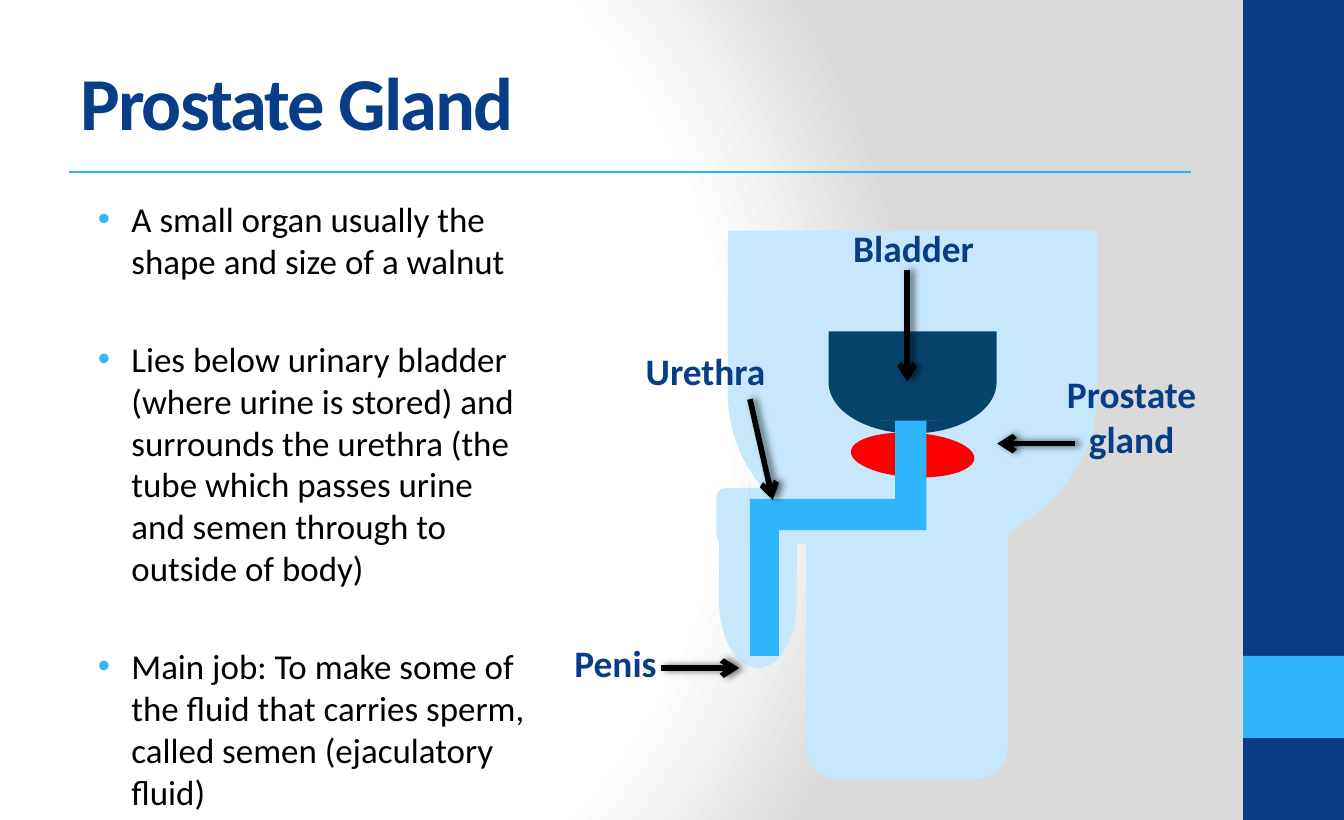
from lxml import etree
from pptx import Presentation
from pptx.dml import color
from pptx.enum import shapes, text
from pptx.oxml import ns
from pptx.util import Inches, Pt

NAVY, SKY, PALE, DEEP = "073E87", "31B6FD", "C6E7FC", "06436B"
RED, BLACK, WHITE, GREY = "FF0000", "000000", "FFFFFF", "DADADA"
KIND = shapes.MSO_SHAPE


def rgb(value):
    return color.RGBColor.from_string(value)


def add_xml(parent, tag, **attributes):
    element = etree.SubElement(parent, ns.qn(tag))
    for name, value in attributes.items():
        element.set(name, str(value))
    return element


def paint_background(slide):
    fill = slide.background.fill
    fill.gradient()
    gradient = fill._fill._gradFill
    for child in list(gradient):
        gradient.remove(child)
    stops = add_xml(gradient, "a:gsLst")
    for position, value in ((0, WHITE), (75, WHITE), (100, GREY)):
        stop = add_xml(stops, "a:gs", pos=position * 1000)
        add_xml(stop, "a:srgbClr", val=value)
    circle = add_xml(gradient, "a:path", path="circle")
    add_xml(circle, "a:fillToRect", l=20000, t=50000, r=100000, b=50000)


def add_block(slide, kind, box, fill, rotation=0, adjustments=()):
    shape = slide.shapes.add_shape(kind, *map(Inches, box))
    shape.shadow.inherit = False
    shape.fill.solid()
    shape.fill.fore_color.rgb = rgb(fill)
    shape.line.fill.background()
    shape.rotation = rotation
    for index, value in enumerate(adjustments):
        shape.adjustments[index] = value


def add_line(slide, start, end, value, width):
    line = slide.shapes.add_connector(
        shapes.MSO_CONNECTOR.STRAIGHT, *map(Inches, start + end))
    line.line.color.rgb = rgb(value)
    line.line.width = Pt(width)
    return line, add_xml(line._element.spPr, "a:effectLst")


def add_arrow(slide, start, end):
    arrow, effects = add_line(slide, start, end, BLACK, 3)
    add_xml(arrow.line._get_or_add_ln(), "a:tailEnd", type="arrow")
    shadow = add_xml(effects, "a:outerShdw", blurRad=Pt(4), dist=Pt(2), dir=0)
    shade = add_xml(shadow, "a:srgbClr", val=BLACK)
    add_xml(shade, "a:alpha", val=60000)


def add_text(slide, box, words, size, value, bold=False,
             align=text.PP_ALIGN.LEFT, anchor=text.MSO_ANCHOR.MIDDLE):
    frame = slide.shapes.add_textbox(*map(Inches, box)).text_frame
    frame.word_wrap = True
    frame.vertical_anchor = anchor
    frame.text = words
    for paragraph in frame.paragraphs:
        paragraph.alignment = align
        font = paragraph.runs[0].font
        font.name, font.size, font.bold = "Calibri", Pt(size), bold
        font.color.rgb = rgb(value)
    return frame


def add_title(slide, words):
    frame = add_text(slide, (0.5, 0.24, 8.33, 1.02), words, 40, NAVY, True)
    frame.paragraphs[0].runs[0].font._element.set("spc", "-100")
    add_line(slide, (0.51, 1.28), (8.86, 1.28), "2BB4FC", 1)


def add_bullets(slide, items):
    frame = add_text(slide, (0.5, 1.42, 3.56, 4.27), "\n".join(items),
                     18.7, BLACK, anchor=text.MSO_ANCHOR.TOP)
    for index, paragraph in enumerate(frame.paragraphs):
        paragraph.space_before = Pt(30 if index else 0)
        properties = paragraph._p.get_or_add_pPr()
        properties.set("marL", str(Inches(0.38)))
        properties.set("indent", str(Inches(-0.25)))
        bullet_color = add_xml(properties, "a:buClr")
        add_xml(bullet_color, "a:srgbClr", val=SKY)
        add_xml(properties, "a:buFont", typeface="Arial")
        add_xml(properties, "a:buChar", char="•")


def add_anatomy(slide):
    delay = KIND.FLOWCHART_DELAY
    add_block(slide, delay, (5.14, 4.18, 1, 0.58), PALE, 90)
    add_block(slide, KIND.ROUNDED_RECTANGLE, (5.33, 3.63, 0.75, 0.42), PALE)
    add_block(slide, KIND.ROUNDED_RECTANGLE, (6, 3.63, 1.5, 2.17), PALE)
    add_block(slide, delay, (5.58, 1.55, 2.42, 2.75), PALE, 90)
    add_block(slide, delay, (6.41, 2.22, 0.76, 1.25), DEEP, 90)
    add_block(slide, KIND.OVAL, (6.33, 3.22, 0.92, 0.33), RED, 3.3)
    add_block(slide, KIND.LEFT_UP_ARROW, (5.58, 3.13, 1.43, 0.93), SKY,
              adjustments=(0.25, 0.25, 0))
    add_block(slide, KIND.MATH_MINUS, (5.02, 3.93, 1.33, 0.92), SKY, 90)


def add_labels(slide):
    labels = (
        ("Bladder ", (6.08, 1.63, 1.5, 0.42), (6.75, 2.01), (6.75, 2.84)),
        ("Prostate gland", (7.67, 2.72, 1.5, 0.75), (8, 3.3), (7.42, 3.3)),
        ("Urethra", (4.5, 2.38, 1.5, 0.75), (5.58, 2.97), (5.75, 3.72)),
        ("Penis", (3.83, 4.55, 1.5, 0.75), (4.92, 4.97), (5.5, 4.97)),
    )
    for words, box, start, end in labels:
        add_arrow(slide, start, end)
        add_text(slide, box, words, 20, NAVY, True, text.PP_ALIGN.CENTER)


def main():
    presentation = Presentation()
    presentation.slide_width = Inches(10)
    presentation.slide_height = Inches(6.1)
    slide = presentation.slides.add_slide(presentation.slide_layouts[6])
    paint_background(slide)
    add_block(slide, KIND.RECTANGLE, (9.25, 0, 0.75, 6.1), NAVY)
    add_block(slide, KIND.RECTANGLE, (9.25, 4.88, 0.75, 0.61), SKY)
    add_anatomy(slide)
    add_title(slide, "Prostate Gland")
    add_bullets(slide, (
        "A small organ usually the shape and size of a walnut",
        "Lies below urinary bladder (where urine is stored) and surrounds "
        "the urethra (the tube which passes urine and semen through to "
        "outside of body)",
        "Main job: To make some of the fluid that carries sperm, called "
        "semen (ejaculatory fluid)",
    ))
    add_labels(slide)
    presentation.save("out.pptx")


if __name__ == "__main__":
    main()
